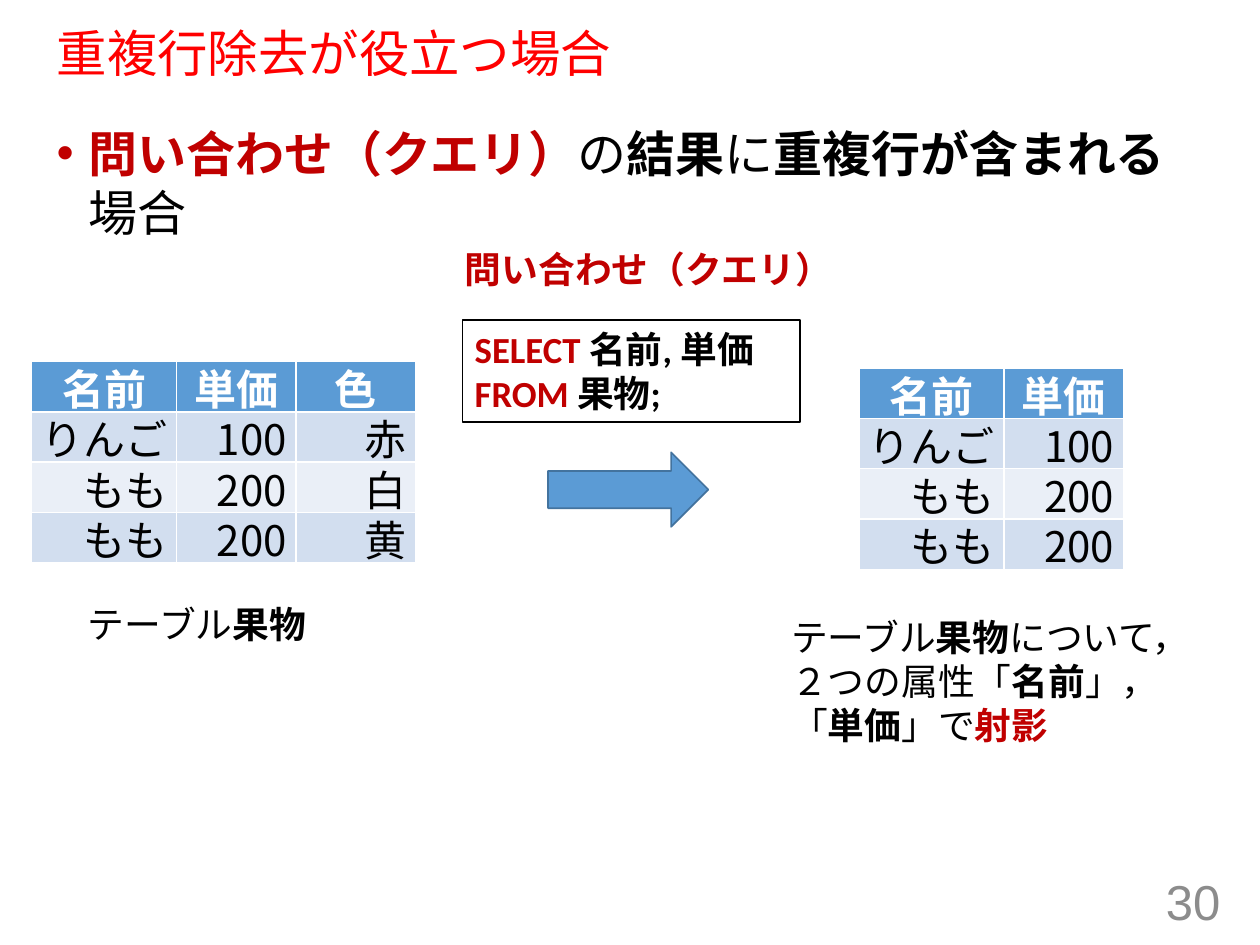
from pptx import Presentation
from pptx import util as u
from pptx.dml.color import RGBColor
from pptx.enum import shapes, text
from pptx.oxml import parse_xml
from pptx.oxml.ns import nsdecls

RED, BLACK, BLUE, WHITE = "C00000", "000000", "5B9BD5", "FFFFFF"
BANDS = ["D2DEEF", "EAEFF7"]
LEFT, MID, RIGHT = text.PP_ALIGN.LEFT, text.PP_ALIGN.CENTER, text.PP_ALIGN.RIGHT
# Run marks: plain, bold, key word
MARKS = {"p": (BLACK, False), "b": (BLACK, True), "k": (RED, True)}


def tint(code):
    return RGBColor.from_string(code)


class Deck:
    def __init__(self):
        self.prs = Presentation()
        self.prs.slide_width, self.prs.slide_height = u.Cm(25.4), u.Cm(19.05)
        self.slide = self.prs.slides.add_slide(self.prs.slide_layouts[1])
        self.head, self.body = "Arial", "Calibri"

    def style(self, para, size, face, color=None, bold=None, align=LEFT):
        font = para.font
        font.size, font.name, font.bold = u.Pt(size), face, bold
        if color:
            font.color.rgb = tint(color)
        para.alignment = align

    def fill(self, frame, lines, size, face):
        """Fill a frame; each line is a list of (mark, words)."""
        frame.word_wrap = True
        for i, line in enumerate(lines):
            para = frame.add_paragraph() if i else frame.paragraphs[0]
            self.style(para, size, face)
            for mark, words in line:
                run = para.add_run()
                run.text = words
                color, run.font.bold = MARKS[mark]
                run.font.color.rgb = tint(color)

    def place(self, shape, box):
        shape.left, shape.top, shape.width, shape.height = map(u.Cm, box)

    def title(self, words, box):
        shape = self.slide.shapes.title
        self.place(shape, box)
        frame = shape.text_frame
        frame.text = words
        frame.auto_size = text.MSO_AUTO_SIZE.NONE
        frame.vertical_anchor = text.MSO_ANCHOR.MIDDLE
        para = frame.paragraphs[0]
        para.line_spacing = 0.9
        self.style(para, 28.8, self.head, "FF0000")

    def bullets(self, lines, box):
        shape = self.slide.placeholders[1]
        self.place(shape, box)
        frame = shape.text_frame
        self.fill(frame, lines, 28, self.head)
        frame.auto_size = text.MSO_AUTO_SIZE.NONE
        for para in frame.paragraphs:
            para.space_before = u.Pt(10)
            props = para._p.get_or_add_pPr()
            props.set("marL", str(u.Cm(0.64)))
            props.set("indent", str(-u.Cm(0.64)))
            mark = parse_xml(f'<a:buChar {nsdecls("a")} char="•"/>')
            props.insert_element_before(mark, "a:tabLst", "a:defRPr", "a:extLst")

    def label(self, lines, box):
        shape = self.slide.shapes.add_textbox(*map(u.Cm, box))
        self.fill(shape.text_frame, lines, 21, self.body)

    def number(self, words, box):
        frame = self.slide.shapes.add_textbox(*map(u.Cm, box)).text_frame
        frame.text = words
        frame.vertical_anchor = text.MSO_ANCHOR.MIDDLE
        frame.word_wrap = True
        self.style(frame.paragraphs[0], 28, self.head, "8C8C8C", align=RIGHT)

    def shape(self, kind, box, line, width, fill=None, lines=()):
        shape = self.slide.shapes.add_shape(kind, *map(u.Cm, box))
        shape.shadow.inherit = False
        if fill:
            shape.fill.solid()
            shape.fill.fore_color.rgb = tint(fill)
        else:
            shape.fill.background()
        shape.line.color.rgb = tint(line)
        shape.line.width = u.Pt(width)
        self.fill(shape.text_frame, lines, 21, self.body)

    def table(self, rows, left, top, cols, first):
        high = u.Cm(4.19)
        item = self.slide.shapes.add_table(
            len(rows), len(cols), u.Cm(left), u.Cm(top), u.Cm(sum(cols)), high)
        grid = item.table
        for col, wide in zip(grid.columns, cols):
            col.width = u.Cm(wide)
        for r, row in enumerate(rows):
            grid.rows[r].height = u.Cm(0.94 if r else first)
            for c, words in enumerate(row):
                self.cell(grid.cell(r, c), words, r)
        item.height = high

    def cell(self, cell, words, r):
        cell.margin_left = cell.margin_right = u.Cm(0.19)
        cell.margin_top = cell.margin_bottom = u.Cm(0.1)
        cell.fill.solid()
        cell.fill.fore_color.rgb = tint(BANDS[(r - 1) % 2] if r else BLUE)
        cell.text = words
        para = cell.text_frame.paragraphs[0]
        para.line_spacing = 0.8
        if r:
            self.style(para, 24, "Noto Sans CJK JP", BLACK, False, RIGHT)
        else:
            self.style(para, 24, self.body, WHITE, True, MID)


def main():
    deck = Deck()

    # Heading, main point and page number
    deck.title("重複行除去が役立つ場合", (0.89, 0.48, 23.5, 1.3))
    deck.bullets([[("k", "問い合わせ（クエリ）"), ("p", "の"), ("b", "結果"), ("p", "に"),
                   ("b", "重複行が含まれる"), ("p", "場合")]], (0.89, 2.36, 23.5, 2.95))
    deck.number("30", (19.13, 17.65, 5.72, 1.02))

    # Source table
    fruit = [("名前", "単価", "色"), ("りんご", "100", "赤"),
             ("もも", "200", "白"), ("もも", "200", "黄")]
    cols = [2.92, 2.41, 2.41]
    deck.table(fruit, 0.64, 7.29, cols, 0.94)
    deck.label([[("p", "テーブル"), ("b", "果物")]], (1.52, 12.01, 6.86, 1.14))

    # Query
    deck.label([[("k", "問い合わせ（クエリ）")]], (9.12, 4.85, 8.33, 1.14))
    deck.shape(shapes.MSO_SHAPE.RECTANGLE, (9.32, 6.45, 6.81, 2.06), BLACK, 0.75,
               lines=[[("k", "SELECT "), ("b", "名前, 単価")],
                      [("k", "FROM "), ("b", "果物;")]])
    deck.shape(shapes.MSO_SHAPE.RIGHT_ARROW, (11.05, 9.12, 3.23, 1.5),
               "43739E", 1, BLUE)

    # Result: the first two columns
    deck.table([row[:2] for row in fruit], 17.32, 7.42, cols[:2], 0)
    deck.label([[("p", "テーブル"), ("b", "果物"), ("p", "について，")],
                [("p", "２つの属性「"), ("b", "名前"), ("p", "」，「"), ("b", "単価"),
                 ("p", "」で"), ("k", "射影")]], (15.7, 12.27, 8.89, 2.95))

    deck.prs.save("out.pptx")


if __name__ == "__main__":
    main()
